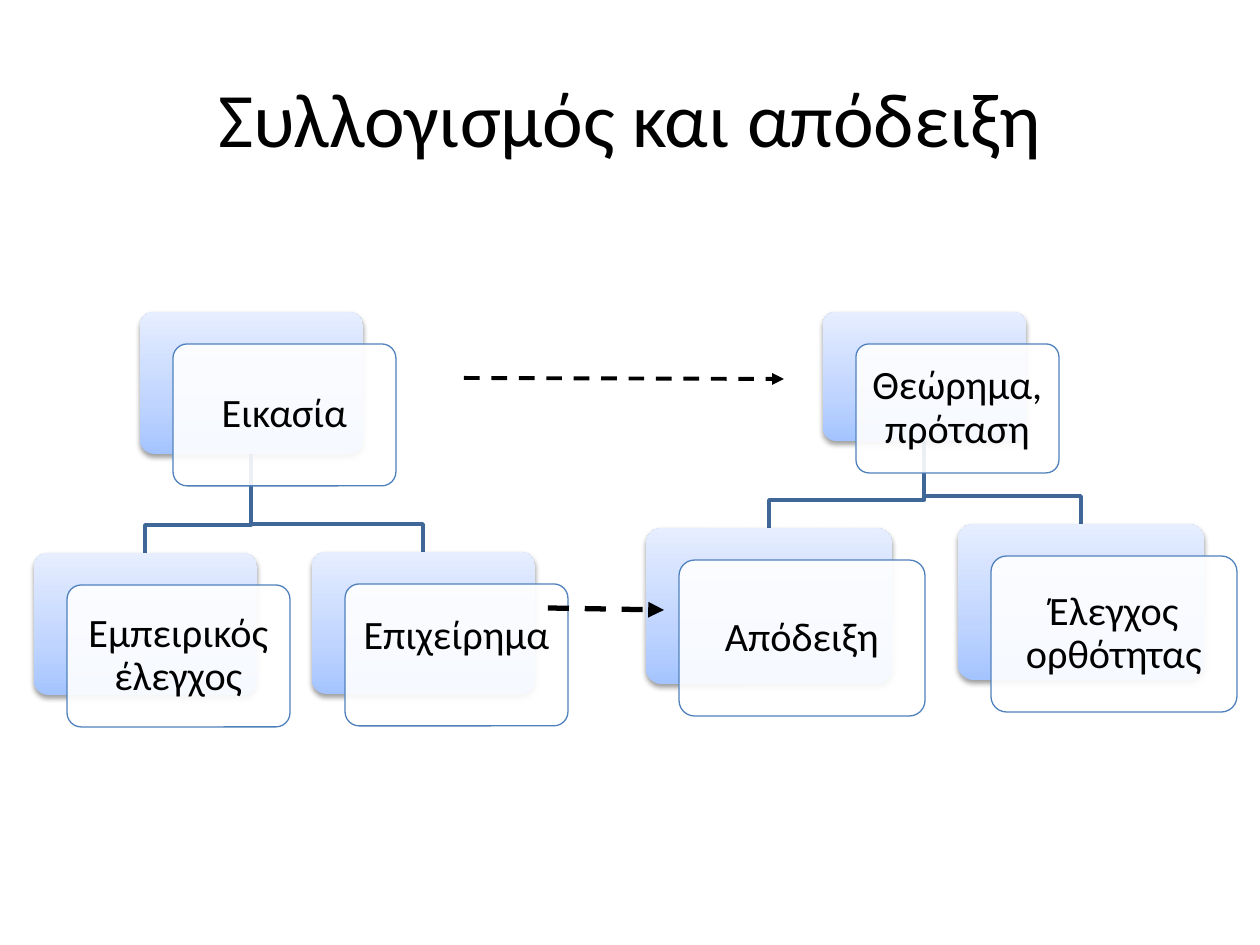
from pptx import Presentation
from pptx.dml.color import RGBColor
from pptx.enum.dml import MSO_LINE
from pptx.enum.shapes import MSO_CONNECTOR as LINK, MSO_SHAPE as SHAPE
from pptx.enum.text import MSO_ANCHOR as ANCHOR, PP_ALIGN as ALIGN
from pptx.oxml import parse_xml
from pptx.oxml.ns import nsdecls, qn
from pptx.util import Pt

PX = 914400 // 126  # EMU in one px
OFFSET_X, OFFSET_Y = 33, 32  # front card against its back card
BEND = 28  # height of a branch's bend above the child
INSET = 10
A_NS = nsdecls("a")

GRADIENT = f"""<a:gsLst {A_NS}>
  <a:gs pos="0"><a:srgbClr val="A4C4FF"/></a:gs>
  <a:gs pos="35000"><a:srgbClr val="BFD4FF"/></a:gs>
  <a:gs pos="100000"><a:srgbClr val="E6EEFF"/></a:gs>
</a:gsLst>"""
SHADOW = f"""<a:effectLst {A_NS}>
  <a:outerShdw blurRad="40000" dist="20000" dir="5400000" rotWithShape="0">
    <a:srgbClr val="000000"><a:alpha val="38000"/></a:srgbClr>
  </a:outerShdw>
</a:effectLst>"""


def color(value):
    return RGBColor.from_string(value)


def write(box, text, size=23, spacing=None, inset=INSET, bottom=INSET):
    """Fill a box with centred text; lengths in px, size in points."""
    frame = box.text_frame
    frame.word_wrap = True
    frame.vertical_anchor = ANCHOR.MIDDLE
    frame.margin_left = frame.margin_right = frame.margin_top = inset * PX
    frame.margin_bottom = bottom * PX
    para = frame.paragraphs[0]
    para.alignment = ALIGN.CENTER
    para.line_spacing = spacing
    span = para.add_run()
    span.text = text
    span.font.name = "Calibri"
    span.font.size = Pt(size)
    span.font.color.rgb = color("000000")


deck = Presentation()
deck.slide_width, deck.slide_height = 1260 * PX, 945 * PX
page = deck.slides.add_slide(deck.slide_layouts[5])
shapes = page.shapes

title = shapes.title
title.left, title.top, title.width, title.height = 63 * PX, 38 * PX, 1134 * PX, 157 * PX
write(title, "Συλλογισμός και απόδειξη", size=44, inset=6, bottom=6)

# Back card of each node: left, top, width, height; then bottom text inset
nodes = {
    "Εικασία": (140, 312, 223, 142, INSET),
    "Εμπειρικός έλεγχος": (34, 553, 223, 142, INSET),
    "Επιχείρημα": (312, 552, 223, 142, 46),
    "Θεώρημα, πρόταση": (823, 312, 203, 129, INSET),
    "Απόδειξη": (646, 528, 246, 156, INSET),
    "Έλεγχος ορθότητας": (958, 524, 246, 156, INSET),
}
branches = [
    ("Θεώρημα, πρόταση", "Έλεγχος ορθότητας"),
    ("Θεώρημα, πρόταση", "Απόδειξη"),
    ("Εικασία", "Επιχείρημα"),
    ("Εικασία", "Εμπειρικός έλεγχος"),
]

for parent, child in branches:
    left, top, width, height, _ = nodes[parent]
    start_x, start_y = left + width // 2, top + height
    left, end_y, width, _, _ = nodes[child]
    end_x, bend_y = left + width // 2, end_y - BEND
    builder = shapes.build_freeform(start_x, start_y, scale=PX)
    builder.add_line_segments(
        [(start_x, bend_y), (end_x, bend_y), (end_x, end_y)], close=False)
    branch = builder.convert_to_shape()
    branch.shadow.inherit = False
    branch.fill.background()
    branch.line.color.rgb = color("3F6797")
    branch.line.width = Pt(2)

for text, (left, top, width, height, bottom) in nodes.items():
    back = shapes.add_shape(
        SHAPE.ROUNDED_RECTANGLE, left * PX, top * PX, width * PX, height * PX)
    front = shapes.add_shape(
        SHAPE.ROUNDED_RECTANGLE, (left + OFFSET_X) * PX, (top + OFFSET_Y) * PX,
        width * PX, height * PX)
    back.adjustments[0] = front.adjustments[0] = 0.1

    back.line.fill.background()
    back.fill.gradient()
    back.fill.gradient_angle = 90
    properties = back._element.spPr
    gradient = properties.find(qn("a:gradFill"))
    gradient.replace(gradient.find(qn("a:gsLst")), parse_xml(GRADIENT))
    properties.append(parse_xml(SHADOW))

    front.shadow.inherit = False
    front.fill.solid()
    front.fill.fore_color.rgb = color("FFFFFF")
    white = front._element.spPr.find(qn("a:solidFill"))[0]
    white.append(parse_xml(f'<a:alpha {A_NS} val="90000"/>'))
    front.line.color.rgb = color("4F81BD")
    front.line.width = Pt(0.75)
    write(front, text, spacing=0.9, bottom=bottom)

arrows = [(464, 378, 784, 379, 2.25), (548, 608, 664, 610, 3)]
for start_x, start_y, end_x, end_y, weight in arrows:
    arrow = shapes.add_connector(
        LINK.STRAIGHT, start_x * PX, start_y * PX, end_x * PX, end_y * PX)
    arrow.line.color.rgb = color("000000")
    arrow.line.width = Pt(weight)
    arrow.line.dash_style = MSO_LINE.DASH
    properties = arrow._element.spPr
    properties.find(qn("a:ln")).append(
        parse_xml(f'<a:tailEnd {A_NS} type="triangle"/>'))
    properties.append(parse_xml(f"<a:effectLst {A_NS}/>"))

deck.save("out.pptx")
